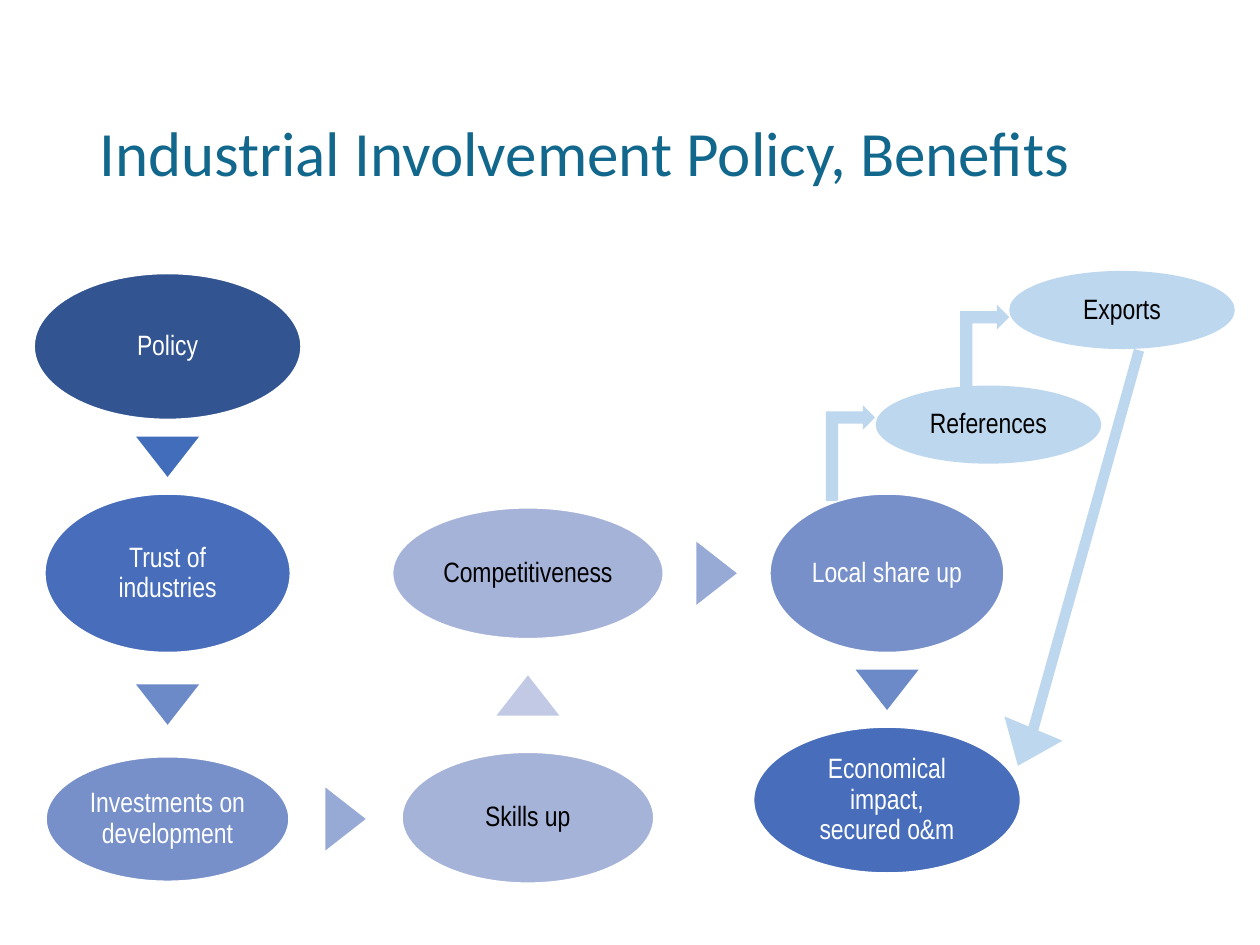
import pptx
import pptx.util
import pptx.dml.color
import pptx.enum.shapes
import pptx.enum.text
import pptx.oxml.ns
from lxml import etree

Inches, Pt = pptx.util.Inches, pptx.util.Pt
KIND = pptx.enum.shapes.MSO_SHAPE
MID = pptx.enum.text.MSO_ANCHOR.MIDDLE
MUTE = pptx.enum.text.PP_ALIGN.CENTER

TITLE = "Industrial Involvement Policy, Benefits"
PALE, WHITE, BLACK = "BDD7EE", "FFFFFF", "000000"
COLS = [1.33, 4.19, 7.04]
STEPS = [
    ("Policy", 0, 2.75, 2.12, 1.16, "325491", WHITE),
    ("Trust of industries", 0, 4.55, 1.95, 1.26, "476DBB", WHITE),
    ("Investments on development", 0, 6.5, 1.93, 0.99, "7790C9", WHITE),
    ("Skills up", 1, 6.49, 2, 1.04, "A6B3D9", BLACK),
    ("Competitiveness", 1, 4.55, 2.15, 1.04, "A6B3D9", BLACK),
    ("Local share up", 2, 4.55, 1.86, 1.26, "7790C9", WHITE),
    ("Economical impact,\vsecured o&m", 2, 6.35, 2.12, 1.16, "476DBB", WHITE),
]
HEADS = ["416DBB", "6C8AC8", "97A9D5", "C1C9E4", "97A9D5", "6C8AC8"]
BENDS = [(6.37, 3.4, 0.76, 0.39), (7.47, 2.57, 0.69, 0.39)]
GAINS = [("References", 6.95, 3.06), ("Exports", 8.01, 2.15)]
HEAD_W, HEAD_H = 0.5, 0.32

deck = pptx.Presentation()
deck.slide_width, deck.slide_height = Inches(10), Inches(7.5)
slide = deck.slides.add_slide(deck.slide_layouts[6])


def tint(code):
    return pptx.dml.color.RGBColor.from_string(code)


def shape(kind, x, y, w, h, fill, turn=0):
    item = slide.shapes.add_shape(kind, *map(Inches, (x, y, w, h)))
    item.shadow.inherit = False
    item.fill.solid()
    item.fill.fore_color.rgb = tint(fill)
    item.line.fill.background()
    item.rotation = turn
    return item


def head(x, y, fill, turn):
    shape(KIND.ISOSCELES_TRIANGLE, x - HEAD_W / 2, y - HEAD_H / 2,
          HEAD_W, HEAD_H, fill, turn)


def write(item, text, size, face, color, align=None):
    frame = item.text_frame
    frame.word_wrap = True
    frame.vertical_anchor = MID
    frame.text = text
    para = frame.paragraphs[0]
    para.alignment = align
    para.line_spacing = 0.9
    for run in para.runs:
        run.font.size = Pt(size)
        run.font.name = face
        run.font.color.rgb = tint(color)


def oval(text, x, y, w, h, fill, ink):
    item = shape(KIND.OVAL, x, y, w, h, fill)
    frame = item.text_frame
    frame.margin_left = frame.margin_right = Inches(0.02)
    frame.margin_top = frame.margin_bottom = Inches(0.02)
    write(item, text, 16, "Arial Narrow", ink, MUTE)
    return item


def link(start, end, fill):
    _, c1, y1, w1, h1 = start[:5]
    _, c2, y2, w2, h2 = end[:5]
    if c1 == c2:
        sign = 1 if y2 > y1 else -1
        head(COLS[c1], (y1 + y2 + sign * (h1 - h2) / 2) / 2,
             fill, 180 if sign > 0 else 0)
    else:
        head((COLS[c1] + COLS[c2] + (w1 - w2) / 2) / 2, y1, fill, 90)


for box in BENDS:
    bend = shape(KIND.BENT_UP_ARROW, *box, PALE, 90)
    bend._element.spPr.find(pptx.oxml.ns.qn("a:xfrm")).set("flipH", "1")
for text, x, y in GAINS:
    oval(text, x, y, 1.79, 0.62, PALE, BLACK)

head(8.14, 5.93, PALE, 202.7)
line = slide.shapes.add_connector(
    pptx.enum.shapes.MSO_CONNECTOR.STRAIGHT,
    *map(Inches, (8.2, 5.79, 9.04, 2.78)))
line.line.color.rgb = tint(PALE)
line.line.width = Pt(6)
etree.SubElement(line._element.spPr, pptx.oxml.ns.qn("a:effectLst"))

title = slide.shapes.add_textbox(*map(Inches, (0.69, 0.56, 9.48, 1.35)))
write(title, TITLE, 36, "Calibri", "12678C")

for text, col, y, w, h, fill, ink in STEPS:
    item = oval(text, COLS[col] - w / 2, y - h / 2, w, h, fill, ink)
    item.line.color.rgb = tint(WHITE)
    item.line.width = Pt(1)
for start, end, fill in zip(STEPS, STEPS[1:], HEADS):
    link(start, end, fill)

deck.save("out.pptx")
